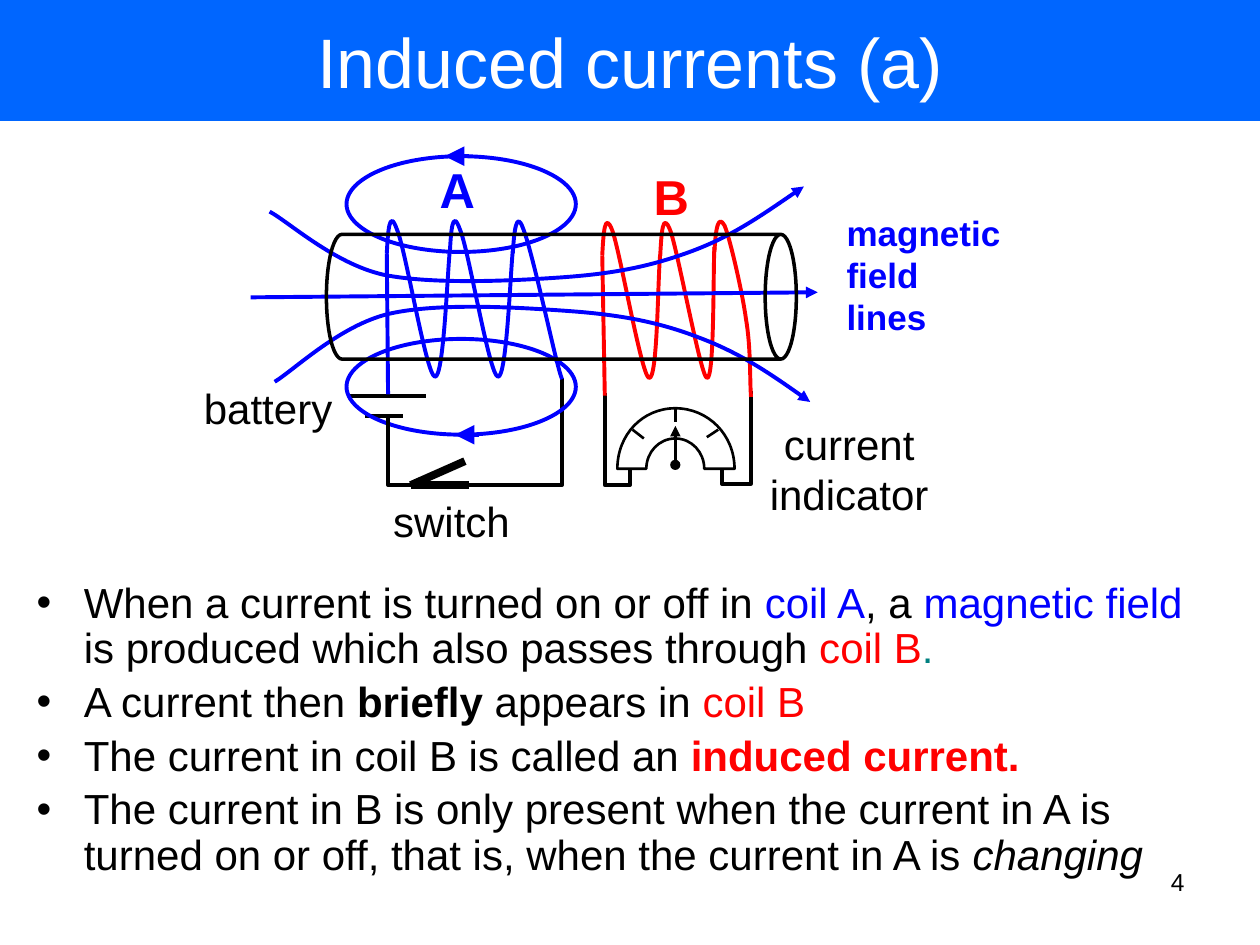
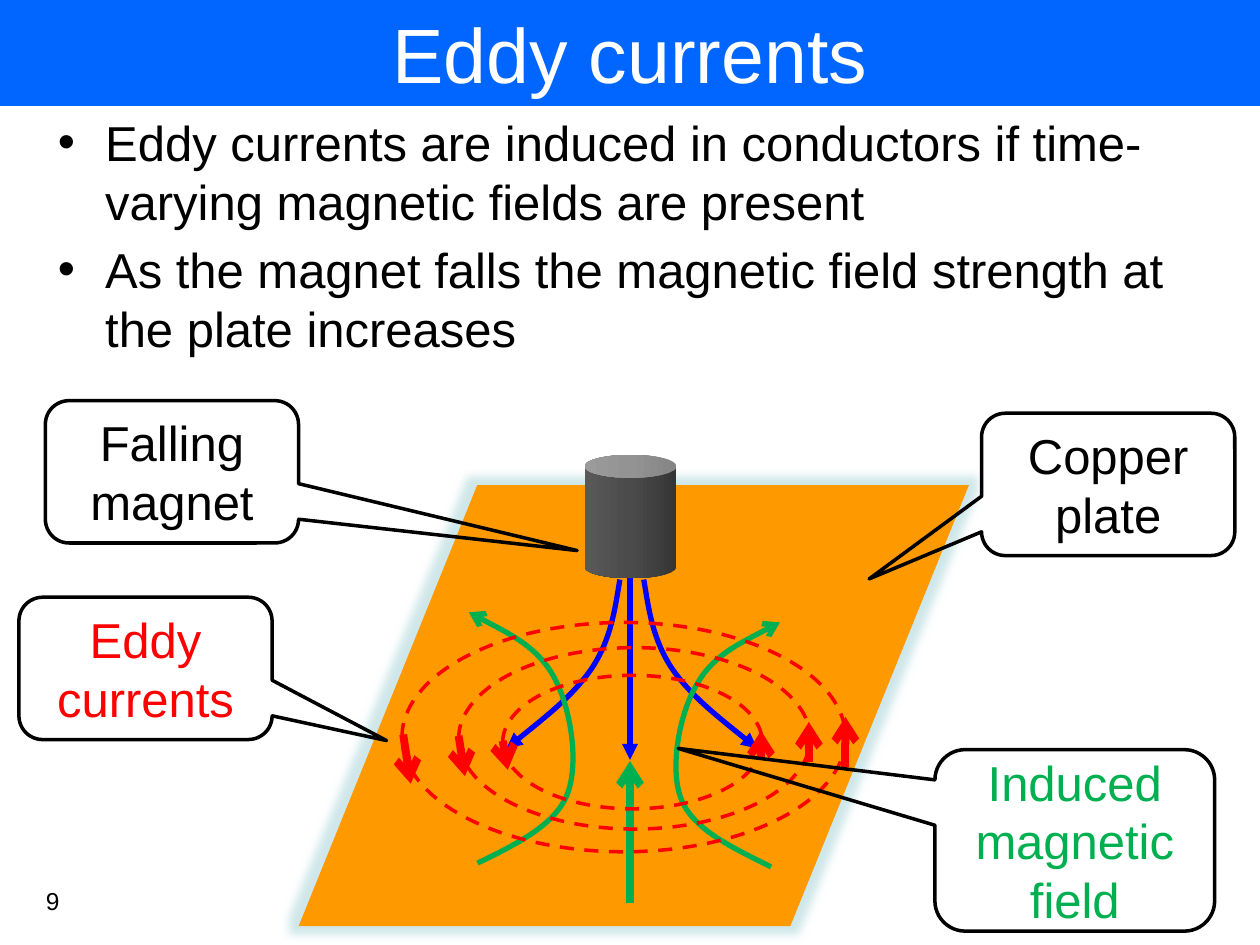
from copy import deepcopy
from dataclasses import dataclass

from lxml import etree
from pptx import Presentation
from pptx.dml.color import RGBColor
from pptx.enum.dml import MSO_LINE
from pptx.enum.shapes import MSO_CONNECTOR, MSO_SHAPE
from pptx.enum.text import MSO_ANCHOR, MSO_AUTO_SIZE, PP_ALIGN
from pptx.oxml.ns import qn
from pptx.util import Inches, Pt

STRAIGHT = MSO_CONNECTOR.STRAIGHT
ELLIPSE, CAN = MSO_SHAPE.OVAL, MSO_SHAPE.CAN
PLATE = MSO_SHAPE.PARALLELOGRAM
CALLOUT = MSO_SHAPE.ROUNDED_RECTANGULAR_CALLOUT
DASH = MSO_LINE.DASH
LEFT, CENTER, RIGHT = PP_ALIGN.LEFT, PP_ALIGN.CENTER, PP_ALIGN.RIGHT
TOP, MIDDLE = MSO_ANCHOR.TOP, MSO_ANCHOR.MIDDLE
NO_FIT = MSO_AUTO_SIZE.NONE

FONT = "Arial"
BAND, WHITE, BLACK = "0066FF", "FFFFFF", "000000"
BLUE, RED, GREEN, TEAL = "0000FF", "FF0000", "00B050", "008080"
ORANGE, GLOW = "FF9900", "A0D0D5"
MAGNET_SHADES = ("353535", "4B4B4B", "595959")

TURN_A = [(0.01, -0.17, 0.02, -0.36, 0.08, -0.19), (0.15, -0.03, 0.31, 0.95, 0.38, 0.98),
          (0.45, 1.01, 0.48, 0.18, 0.5, -0.02)]
END_A = [(0.01, -0.18, 0.03, -0.34, 0.08, -0.2), (0.14, -0.06, 0.29, 0.62, 0.34, 0.82),
         (0.39, 1.02, 0.38, 0.96, 0.39, 1)]
TURN_B = [(0.01, -0.18, 0.02, -0.36, 0.08, -0.2), (0.14, -0.04, 0.31, 0.94, 0.37, 0.97),
          (0.44, 1, 0.44, 0.2, 0.46, -0.01)]
NARROW_B = [TURN_B[0], (0.14, -0.04, 0.32, 0.95, 0.37, 0.97), (0.43, 1, 0.42, 0.15, 0.43, -0.07)]
END_B = [(0.01, -0.19, 0.03, -0.3, 0.08, -0.21), (0.12, -0.12, 0.22, 0.31, 0.25, 0.53),
         (0.29, 0.76, 0.28, 1.02, 0.29, 1.15)]
HALF_RING = [(-0.23, -0.13, -0.13, -0.24, 0, -0.24), (0.13, -0.24, 0.23, -0.13, 0.23, 0), (0.47, 0),
             (0.47, -0.27, 0.26, -0.48, 0, -0.48), (-0.26, -0.48, -0.46, -0.27, -0.46, 0), (-0.23, 0)]


@dataclass
class Box:
    page: object
    left: float
    top: float
    width: float
    height: float

    def point(self, x, y):
        return Inches(self.left + x), Inches(self.top + y)

    def frame(self, x, y, width, height):
        return (*self.point(x, y), Inches(width), Inches(height))


def rgb(value):
    return RGBColor.from_string(value)


def apply(target, formats):
    for name, value in formats.items():
        setattr(target, name, value)


def set_line(shape, color, width, tail=None, dash=None, head_size="med"):
    shape.line.color.rgb = rgb(color)
    shape.line.width = Pt(width)
    if dash:
        shape.line.dash_style = dash
    if tail:
        line = shape.line._get_or_add_ln()
        etree.SubElement(line, qn("a:tailEnd"), type=tail, w=head_size, len=head_size)


def write(frame, paragraphs, size, color=BLACK, align=LEFT, anchor=TOP, spacing=None, wrap=True, **formats):
    apply(frame, {"word_wrap": wrap, "auto_size": NO_FIT, "vertical_anchor": anchor})
    for index, runs in enumerate(paragraphs):
        para = frame.add_paragraph() if index else frame.paragraphs[0]
        apply(para, {"alignment": align, "line_spacing": spacing})
        for text, *details in [(runs,)] if isinstance(runs, str) else runs:
            run_color, run_formats = (*details, *(color, {})[len(details):])
            span = para.add_run()
            span.text = text
            apply(span.font, {"name": FONT, "size": Pt(size), **formats, **run_formats})
            span.font.color.rgb = rgb(run_color)


def label(box, x, y, width, height, lines, size, color=BLACK, inset=None, **formats):
    frame = box.page.shapes.add_textbox(*box.frame(x, y, width, height)).text_frame
    if inset is not None:
        apply(frame, {f"margin_{side}": Inches(inset) for side in ("left", "top", "right", "bottom")})
    write(frame, lines, size, color, **formats)


def straight(box, start, end, color, width, tail=None, head_size="med"):
    line = box.page.shapes.add_connector(STRAIGHT, *box.point(*start), *box.point(*end))
    set_line(line, color, width, tail, head_size=head_size)
    etree.SubElement(line._element.spPr, qn("a:effectLst"))


def outline(box, start, segments, color, width, tail=None, close=False):
    points = [box.point(*segment[i:i + 2]) for segment in segments for i in range(0, len(segment), 2)]
    builder = box.page.shapes.build_freeform(*box.point(*start))
    builder.add_line_segments(points, close=close)
    shape = builder.convert_to_shape()
    steps = iter(list(shape._element.iter(qn("a:lnTo"))))
    for segment in segments:
        step = next(steps)
        if len(segment) == 6:
            step.tag = qn("a:cubicBezTo")
            for _ in range(2):
                control = next(steps)
                step.append(control[0])
                control.getparent().remove(control)
    shape.shadow.inherit = False
    shape.fill.background()
    set_line(shape, color, width, tail)


def preset(box, kind, x, y, width, height, line=None, fill=None, adjust=()):
    shape = box.page.shapes.add_shape(kind, *box.frame(x, y, width, height))
    shape.shadow.inherit = False
    for index, value in enumerate(adjust):
        shape.adjustments[index] = value
    if fill:
        shape.fill.solid()
        shape.fill.fore_color.rgb = rgb(fill)
    else:
        shape.fill.background()
    if line:
        set_line(shape, *line)
    else:
        shape.line.fill.background()
    return shape


def place(shape, box):
    apply(shape, dict(zip(("left", "top", "width", "height"), box.frame(0, 0, box.width, box.height))))


def title_band(box, text, size):
    title = box.page.shapes.title
    place(title, box)
    title.fill.solid()
    title.fill.fore_color.rgb = rgb(BAND)
    write(title.text_frame, [text], size, WHITE, CENTER, MIDDLE)


def bullet_list(box, paragraphs, size, spacing=None):
    body = box.page.placeholders[1]
    place(body, box)
    write(body.text_frame, paragraphs, size, spacing=spacing)


def page_number(box, number):
    label(box, 0, 0, box.width, box.height, [number], 14, align=RIGHT)


def coil(box, color, lead, turns):
    straight(box, lead, turns[0][0], color, 2.25)
    for (x, y), curves in turns:
        moved = [tuple(value + (y if index % 2 else x) for index, value in enumerate(curve))
                 for curve in curves]
        outline(box, (x, y), moved, color, 2.25)


def meter(box):
    outline(box, (-0.23, 0), HALF_RING, BLACK, 1.5, close=True)
    for start, end in (((0, -0.48), (0, -0.37)), ((-0.34, -0.31), (-0.25, -0.24)),
                       ((0.34, -0.31), (0.25, -0.25))):
        straight(box, start, end, BLACK, 1.5)
    straight(box, (0, -0.03), (0, -0.34), BLACK, 1.5, "triangle")
    preset(box, ELLIPSE, -0.03, -0.06, 0.06, 0.06, (BLACK, 1.5), BLACK)


def field_lines(box):
    upper = [(1.29, 0.76, 1.65, 1.09, 2.04, 1.18), (2.43, 1.26, 3.07, 1.23, 3.48, 1.2),
             (3.89, 1.17, 4.18, 1.11, 4.5, 0.99), (4.82, 0.87, 5.1, 0.67, 5.38, 0.48)]
    lower = [(1.33, 1.94, 1.7, 1.58, 2.09, 1.49), (2.49, 1.4, 3.12, 1.44, 3.53, 1.47),
             (3.94, 1.5, 4.24, 1.56, 4.55, 1.68), (4.87, 1.8, 5.15, 1.99, 5.43, 2.19)]
    for start, segments in (((0.99, 1.36), [(5.49, 1.32)]), ((1.14, 0.68), upper), ((1.18, 2.03), lower)):
        outline(box, start, segments, BLUE, 2.25, "triangle")
    for loop_top in (0.24, 1.69):
        preset(box, ELLIPSE, 1.75, loop_top, 1.82, 0.76, (BLUE, 2.25))
    for x, y in ((2.8, 2.45), (2.72, 0.24)):
        straight(box, (x, y), (x - 0.19, y), BLUE, 2.25, "triangle", "lg")


def induction_circuit(box):
    def wire(start, *ends):
        outline(box, start, ends, BLACK, 2.25)

    label(box, 2.39, 0.22, 0.5, 0.57, ["A"], 28, BLUE, bold=True)
    label(box, 5.62, 0.63, 1.48, 0.77, ["magnetic", "field lines"], 20, BLUE, bold=True)
    label(box, 5.01, 2.27, 1.46, 0.9, ["current", "indicator"], 24, align=CENTER, wrap=False)
    label(box, 2.12, 2.93, 1.13, 0.4, ["switch"], 24, inset=0)
    label(box, 0.52, 1.99, 1.22, 0.5, ["battery"], 24, wrap=False)
    for start, end in (((1.77, 2.14), (2.38, 2.14)), ((1.9, 2.3), (2.2, 2.3))):
        straight(box, start, end, BLACK, 2.25)
    wire((3.46, 2), (3.46, 2.85), (2.62, 2.85))
    label(box, 4.09, 0.27, 0.5, 0.57, ["B"], 28, RED, bold=True)
    straight(box, (5.09, 1.69), (5.09, 2.03), WHITE, 4.5)
    meter(Box(box.page, box.left + 4.36, box.top + 2.72, 0.94, 0.48))
    wire((3.8, 2.12), (3.8, 2.85), (4, 2.85), (4, 2.72))
    wire((4.96, 2.1), (4.96, 2.84), (4.73, 2.84), (4.73, 2.72))
    coil(box, BLUE, (2.08, 2.13), [((2.07, 1.01), TURN_A), ((2.57, 1.01), TURN_A), ((3.07, 1.01), END_A)])
    coil(box, RED, (3.8, 2.14), [((3.78, 1.03), TURN_B), ((4.24, 1.03), NARROW_B), ((4.67, 1), END_B)])
    field_lines(box)
    wire((2.08, 2.31), (2.08, 2.85), (2.26, 2.85))
    for end in ((2.69, 2.66), (2.72, 2.85)):
        straight(box, (2.26, 2.85), end, BLACK, 4.5)


def iron_core(box):
    core = preset(box, CAN, 0, 0, box.width, box.height, (BLACK, 2))
    core.rotation = 90


def falling_magnet(box):
    magnet = preset(box, CAN, 4.64, 0.61, 0.73, 0.98)
    magnet.fill.gradient()
    magnet.fill.gradient_angle = 180
    first = next(magnet._element.iter(qn("a:gs")))
    middle = deepcopy(first)
    middle.set("pos", "50000")
    first.addnext(middle)
    for stop, color in zip(magnet.fill.gradient_stops, MAGNET_SHADES):
        stop.color.rgb = rgb(color)
    straight(box, (5, 1.59), (5, 3.03), BLUE, 3, "triangle")
    outline(box, (4.92, 1.6), [(4.88, 1.84, 4.85, 2.07, 4.7, 2.3), (4.55, 2.52, 4.28, 2.73, 4.02, 2.94)],
            BLUE, 3, "triangle")
    outline(box, (5.11, 1.6), [(5.15, 1.84, 5.18, 2.07, 5.33, 2.3), (5.48, 2.52, 5.75, 2.73, 6.01, 2.94)],
            BLUE, 3, "triangle")


def induced_field(box):
    left = [(4.1, 3.7, 4.4, 3.55, 4.5, 3.31), (4.6, 3.06, 4.53, 2.62, 4.4, 2.38),
            (4.27, 2.14, 3.99, 2, 3.72, 1.86)]
    right = [(5.82, 3.73, 5.51, 3.59, 5.41, 3.35), (5.31, 3.11, 5.39, 2.68, 5.52, 2.45),
             (5.65, 2.21, 5.92, 2.08, 6.19, 1.94)]
    for start, curves in (((3.79, 3.85), left), ((6.12, 3.88), right)):
        outline(box, start, curves, GREEN, 3, "arrow")
    straight(box, (5, 4.17), (5, 3.04), GREEN, 4.5, "arrow")


def eddy_loops(box):
    loops = [((3.64, 2.14, 2.79, 1.44), (6.42, 3.05, 2.73), (3.64, 2.84, 3.69, 3.16)),
             ((3.99, 2.36, 2.06, 1.06), (6.04, 3.03, 2.8), (3.99, 2.88, 4.03, 3.11)),
             ((3.19, 1.94, 3.52, 1.82), (6.71, 3.09, 2.69), (3.2, 2.83, 3.26, 3.22))]
    for loop, (x, low, high), drop in loops:
        preset(box, ELLIPSE, *loop, (RED, 2, None, DASH))
        straight(box, (x, low), (x, high), RED, 4.5, "arrow")
        straight(box, drop[:2], drop[2:], RED, 4.5, "arrow")


def callout(box, pointer, lines, color):
    shape = preset(box, CALLOUT, 0, 0, box.width, box.height, (BLACK, 2), adjust=(*pointer, 0.167))
    write(shape.text_frame, lines, 28, color, CENTER, MIDDLE)


def eddy_scene(box):
    plate = preset(box, PLATE, 2.37, 0.85, 5.32, 3.5, fill=ORANGE, adjust=[0.405])
    effects = plate._element.spPr.find(qn("a:effectLst"))
    glow = etree.SubElement(effects, qn("a:glow"), rad=str(Inches(0.14)))
    tint = etree.SubElement(glow, qn("a:srgbClr"), val=GLOW)
    etree.SubElement(tint, qn("a:alpha"), val="50000")
    falling_magnet(box)
    induced_field(box)
    page, top = box.page, box.top
    callout(Box(page, 0.36, top + 0.18, 2.01, 1.13), (1.6, 0.553), ["Falling", "magnet"], BLACK)
    callout(Box(page, 0.15, top + 1.74, 2.01, 1.13), (0.952, 0.507), ["Eddy", "currents"], RED)
    eddy_loops(box)
    callout(Box(page, 7.42, top + 2.95, 2.22, 1.44), (-1.418, -0.507), ["Induced magnetic field"], GREEN)
    callout(Box(page, 7.79, top + 0.28, 2.01, 1.13), (-0.944, 0.664), ["Copper", "plate"], BLACK)


def induced_currents_slide(page):
    title_band(Box(page, 0, 0, 10, 0.96), "Induced currents (a)", 40)
    bullet_list(Box(page, 0.19, 4.57, 9.31, 2.59), [
        [("When a current is turned on or off in ",), ("coil A", BLUE), (", a ",),
         ("magnetic field", BLUE), (" is produced which also passes through ",),
         ("coil B", RED), (".", TEAL)],
        [("A current then ",), ("briefly", BLACK, {"bold": True}), (" appears in ",), ("coil B", RED)],
        [("The current in coil B is called an ",), ("induced current.", RED, {"bold": True})],
        [("The current in B is only present when the current in A is turned on or off, "
          "that is, when the current in A is ",), ("changing", BLACK, {"italic": True})],
    ], 24, 0.9)
    induction_circuit(Box(page, 1, 1, 7.2, 3.4))
    page_number(Box(page, 7.17, 6.83, 2.33, 0.52), "4")
    iron_core(Box(page, 3.96, 0.49, 0.99, 3.73))


def eddy_currents_slide(page):
    title_band(Box(page, 0, 0, 10, 0.84), "Eddy currents", 44)
    bullet_list(Box(page, 0.36, 0.84, 9, 2.05), [
        "Eddy currents are induced in conductors if time-varying magnetic fields are present",
        "As the magnet falls the magnetic field strength at the plate increases"], 28)
    page_number(Box(page, 0.15, 6.98, 0.42, 0.52), "9")
    eddy_scene(Box(page, 0, 3, 10, 4.5))


def main():
    deck = Presentation()
    apply(deck, {"slide_width": Inches(10), "slide_height": Inches(7.5)})
    for build in (induced_currents_slide, eddy_currents_slide):
        build(deck.slides.add_slide(deck.slide_layouts[1]))
    deck.save("out.pptx")


if __name__ == "__main__":
    main()
